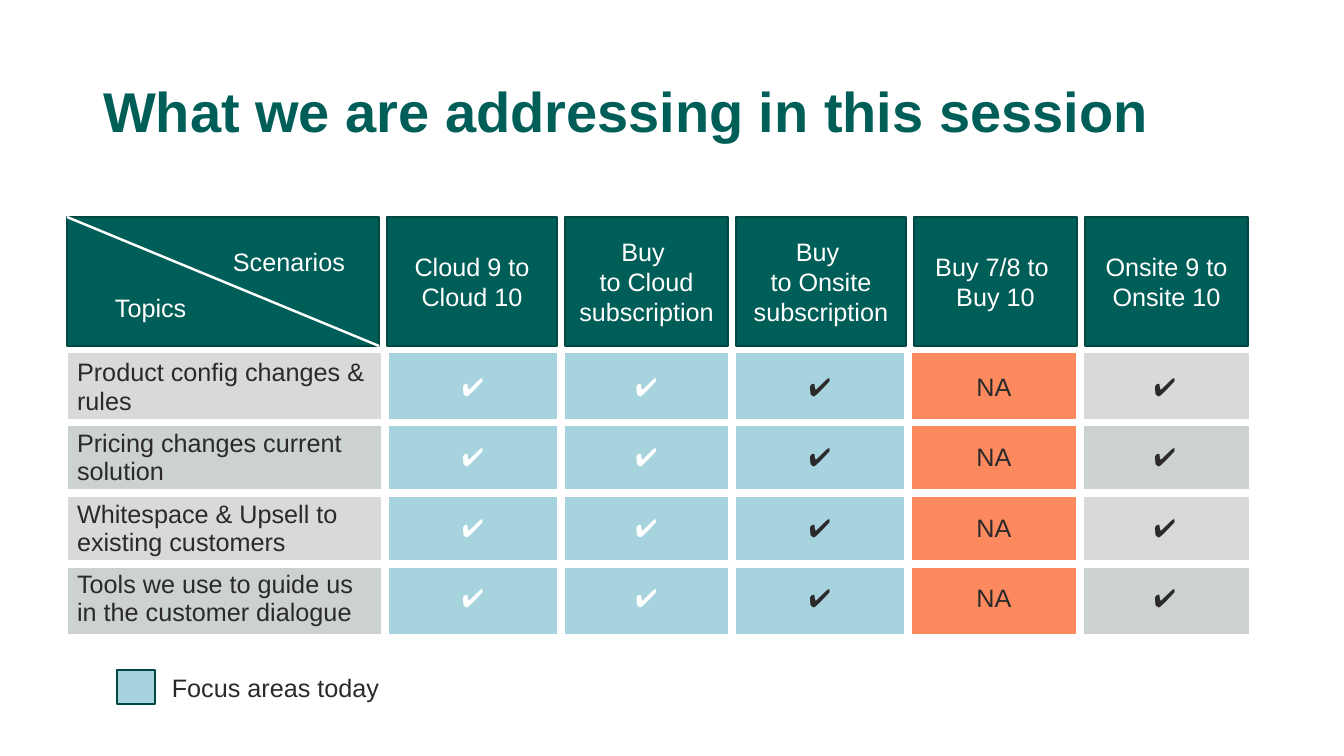
from lxml.etree import SubElement
from pptx import Presentation
from pptx.dml.color import RGBColor
from pptx.enum.shapes import MSO_CONNECTOR, MSO_SHAPE
from pptx.enum.text import MSO_ANCHOR, MSO_AUTO_SIZE, PP_ALIGN
from pptx.oxml.ns import qn
from pptx.util import Emu, Pt

FONT = "Arial"
GREEN, DARK_GREEN, FOCUS, ORANGE = "005E58", "004641", "A6D3DD", "FC8A5E"
WHITE, INK = "FFFFFF", "2B2929"
ROW_FILLS = ["D9D9D9", "CCD2D1"]
LEFT, HEADER_TOP, HEADER_HEIGHT = 67, 217, 129
CORNER_WIDTH = 312
SCENARIO_LEFT, SCENARIO_GAP = 387, 8
SCENARIOS = [
    (170, ["Cloud 9 to Cloud 10"]),
    (163, ["Buy ", "to Cloud subscription"]),
    (170, ["Buy ", "to Onsite subscription"]),
    (163, ["Buy 7/8 to ", "Buy 10"]),
    (163, ["Onsite 9 to Onsite 10"]),
]
TOPICS = [
    "Product config changes & rules",
    "Pricing changes current solution",
    "Whitespace & Upsell to existing customers",
    "Tools we use to guide us in the customer dialogue",
]
COVERAGE = [
    ("✔️", WHITE, FOCUS),
    ("✔️", WHITE, FOCUS),
    ("✔️", INK, FOCUS),
    ("NA", INK, ORANGE),
    ("✔️", INK, None),
]
COLUMN_WIDTHS = [318, 176, 171, 176, 172, 170]
TABLE_TOP, ROW_HEIGHT = 352, 66


def px(length):
    """Turn pixels into EMU."""
    return Emu(round(length * 914400 / 100.8))


def color(value):
    """Turn a hex string into a colour."""
    return RGBColor.from_string(value)


def write(frame, lines, ink, align=PP_ALIGN.LEFT, size=18, bold=False):
    """Write each line as a paragraph with one formatted run."""
    for index, line in enumerate(lines):
        paragraph = frame.add_paragraph() if index else frame.paragraphs[0]
        paragraph.alignment = align
        run = paragraph.add_run()
        run.text = line
        run.font.name = FONT
        run.font.size = Pt(size)
        run.font.bold = bold
        run.font.color.rgb = color(ink)


def add_title(slide, text):
    """Place and fill the title placeholder."""
    title = slide.shapes.title
    title.left, title.top, title.width, title.height = map(px, (93, 67, 1159, 94))
    frame = title.text_frame
    frame.auto_size = MSO_AUTO_SIZE.NONE
    frame.vertical_anchor = MSO_ANCHOR.MIDDLE
    write(frame, [text], GREEN, size=40, bold=True)
    frame.paragraphs[0].line_spacing = 0.9


def add_box(slide, left, top, width, height, fill, lines=()):
    """Add an outlined rectangle with centred white text."""
    box = slide.shapes.add_shape(MSO_SHAPE.RECTANGLE, *map(px, (left, top, width, height)))
    box.shadow.inherit = False
    box.fill.solid()
    box.fill.fore_color.rgb = color(fill)
    box.line.color.rgb = color(DARK_GREEN)
    box.line.width = Pt(1)
    box.text_frame.word_wrap = True
    box.text_frame.vertical_anchor = MSO_ANCHOR.MIDDLE
    write(box.text_frame, lines, WHITE, PP_ALIGN.CENTER)


def add_label(slide, left, top, width, text, ink):
    """Add a one-line text label."""
    label = slide.shapes.add_textbox(*map(px, (left, top, width, 40)))
    label.text_frame.word_wrap = False
    label.text_frame.auto_size = MSO_AUTO_SIZE.SHAPE_TO_FIT_TEXT
    write(label.text_frame, [text], ink)


def add_diagonal(slide):
    """Split the corner box with a white line."""
    ends = (LEFT, HEADER_TOP, LEFT + CORNER_WIDTH, HEADER_TOP + HEADER_HEIGHT)
    diagonal = slide.shapes.add_connector(MSO_CONNECTOR.STRAIGHT, *map(px, ends))
    diagonal.line.color.rgb = color(WHITE)
    diagonal.line.width = Pt(1.75)
    SubElement(diagonal.element.spPr, qn("a:effectLst"))


def add_borders(cell, outer_sides):
    """Give a cell white borders, thin on the outer sides of the table."""
    properties = cell._tc.get_or_add_tcPr()
    for index, side in enumerate(("lnL", "lnR", "lnT", "lnB")):
        width = Pt(1) if side in outer_sides else Pt(6)
        border = SubElement(properties, qn(f"a:{side}"), w=str(width))
        fill = SubElement(border, qn("a:solidFill"))
        SubElement(fill, qn("a:srgbClr"), val=WHITE)
        properties.insert(index, border)


def fill_cell(cell, text, ink, fill, align, outer_sides):
    """Write and format one table cell."""
    cell.fill.solid()
    cell.fill.fore_color.rgb = color(fill)
    cell.vertical_anchor = MSO_ANCHOR.MIDDLE
    write(cell.text_frame, [text], ink, align)
    add_borders(cell, outer_sides)


def add_coverage_table(slide):
    """Add the table of topics against scenarios."""
    rows, columns = len(TOPICS), len(COLUMN_WIDTHS)
    place = (LEFT, TABLE_TOP, sum(COLUMN_WIDTHS), rows * ROW_HEIGHT)
    table = slide.shapes.add_table(rows, columns, *map(px, place)).table
    table.first_row = table.horz_banding = False
    for column, width in zip(table.columns, COLUMN_WIDTHS):
        column.width = px(width)
    for r, topic in enumerate(TOPICS):
        table.rows[r].height = px(ROW_HEIGHT)
        for c, (text, ink, fill) in enumerate([(topic, INK, None), *COVERAGE]):
            edges = {"lnL": c == 0, "lnR": c == columns - 1, "lnT": r == 0, "lnB": r == rows - 1}
            outer_sides = [side for side, outer in edges.items() if outer]
            align = PP_ALIGN.CENTER if c else PP_ALIGN.LEFT
            fill_cell(table.cell(r, c), text, ink, fill or ROW_FILLS[r % 2], align, outer_sides)


def main():
    """Build the slide and save it."""
    deck = Presentation()
    deck.slide_width, deck.slide_height = px(1344), px(756)
    slide = deck.slides.add_slide(deck.slide_layouts[5])
    add_title(slide, "What we are addressing in this session")
    add_box(slide, LEFT, HEADER_TOP, CORNER_WIDTH, HEADER_HEIGHT, GREEN)
    add_label(slide, 223, 241, 133, "Scenarios", WHITE)
    add_label(slide, 105, 287, 93, "Topics", WHITE)
    add_diagonal(slide)
    left = SCENARIO_LEFT
    for width, lines in SCENARIOS:
        add_box(slide, left, HEADER_TOP, width, HEADER_HEIGHT, GREEN, lines)
        left += width + SCENARIO_GAP
    add_coverage_table(slide)
    add_box(slide, 117, 670, 38, 34, FOCUS)
    add_label(slide, 162, 667, 230, "Focus areas today", INK)
    deck.save("out.pptx")


if __name__ == "__main__":
    main()
